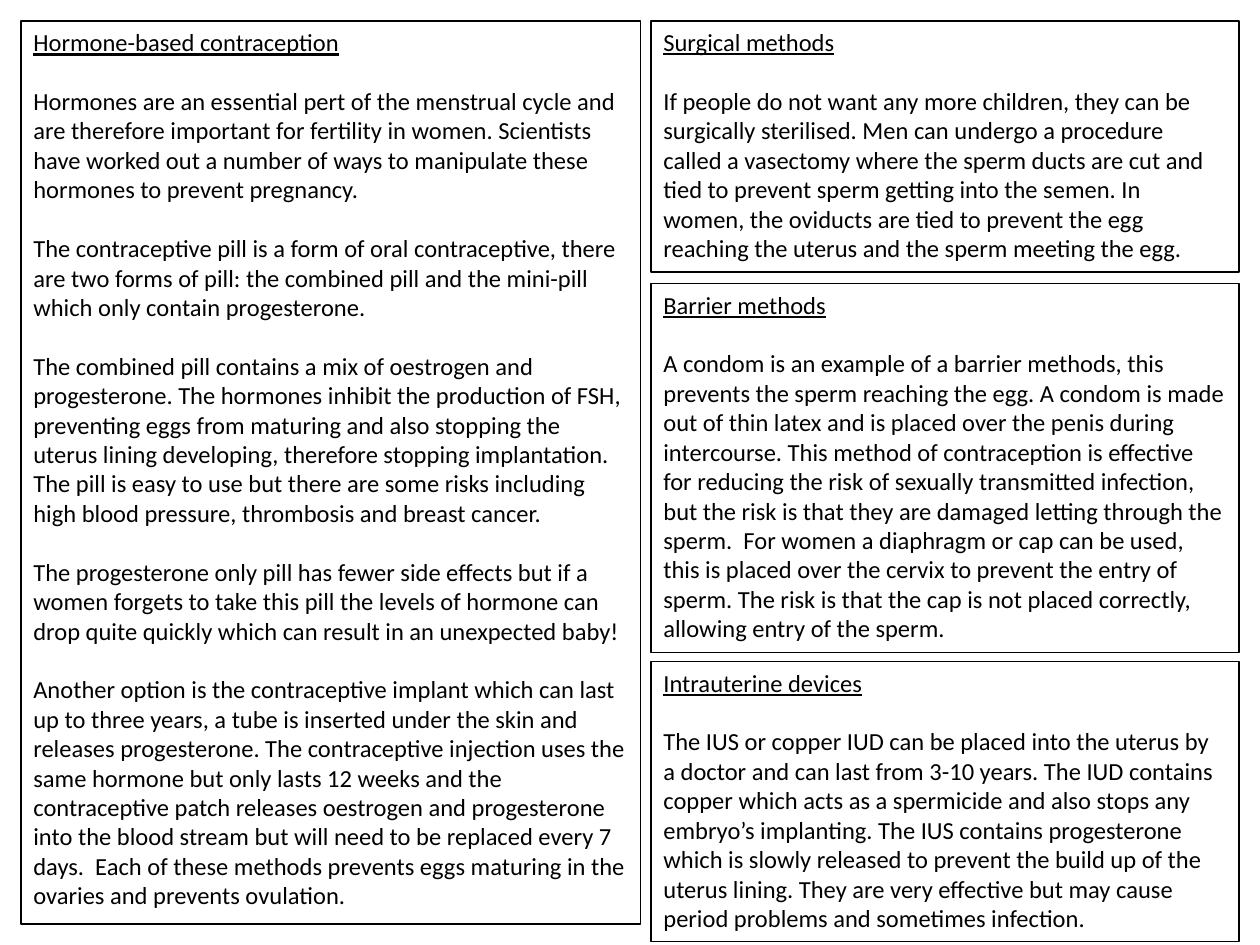
"""Build a one-slide summary of contraception methods in four bordered boxes."""
from pptx import Presentation
from pptx.dml.color import RGBColor
from pptx.enum.text import MSO_AUTO_SIZE
from pptx.util import Pt

FIT_SHAPE = MSO_AUTO_SIZE.SHAPE_TO_FIT_TEXT
COLOURS = {"ink": "000000"}
FONT_NAME = "Calibri"
FONT_SIZE = 14
PARAGRAPH_GAP = 16.8
BLANK_LAYOUT = 6

HORMONES = [
    "Hormones are an essential pert of the menstrual cycle and are therefore important for "
    "fertility in women. Scientists have worked out a number of ways to manipulate these "
    "hormones to prevent pregnancy.",
    "The contraceptive pill is a form of oral contraceptive, there are two forms of pill: the "
    "combined pill and the mini-pill which only contain progesterone.",
    "The combined pill contains a mix of oestrogen and progesterone. The hormones inhibit the "
    "production of FSH, preventing eggs from maturing and also stopping the uterus lining "
    "developing, therefore stopping implantation.  The pill is easy to use but there are some "
    "risks including high blood pressure, thrombosis and breast cancer.",
    "The progesterone only pill has fewer side effects but if a women forgets to take this pill "
    "the levels of hormone can drop quite quickly which can result in an unexpected baby!",
    "Another option is the contraceptive implant which can last up to three years, a tube is "
    "inserted under the skin and releases progesterone. The contraceptive injection uses the "
    "same hormone but only lasts 12 weeks and the contraceptive patch releases oestrogen and "
    "progesterone into the blood stream but will need to be replaced every 7 days.  Each of "
    "these methods prevents eggs maturing in the ovaries and prevents ovulation.",
]
SURGERY = [
    "If people do not want any more children, they can be surgically sterilised. Men can undergo "
    "a procedure called a vasectomy where the sperm ducts are cut and tied to prevent sperm "
    "getting into the semen. In women, the oviducts are tied to prevent the egg reaching the "
    "uterus and the sperm meeting the egg.",
]
BARRIERS = [
    "A condom is an example of a barrier methods, this prevents the sperm reaching the egg. A "
    "condom is made out of thin latex and is placed over the penis during intercourse. This "
    "method of contraception is effective for reducing the risk of sexually transmitted "
    "infection, but the risk is that they are damaged letting through the sperm.  For women a "
    "diaphragm or cap can be used, this is placed over the cervix to prevent the entry of sperm. "
    "The risk is that the cap is not placed correctly, allowing entry of the sperm.",
]
DEVICES = [
    "The IUS or copper IUD can be placed into the uterus by a doctor and can last from 3-10 "
    "years. The IUD contains copper which acts as a spermicide and also stops any embryo’s "
    "implanting. The IUS contains progesterone which is slowly released to prevent the build up "
    "of the uterus lining. They are very effective but may cause period problems and sometimes "
    "infection.",
]
COLUMNS = [
    {"left": 12, "width": 354, "boxes": [
        (12, 516, "Hormone-based contraception", HORMONES),
    ]},
    {"left": 372, "width": 336, "boxes": [
        (12, 143.5, "Surgical methods", SURGERY),
        (162, 211, "Barrier methods", BARRIERS),
        (378, 160, "Intrauterine devices", DEVICES),
    ]},
]


def add_method_box(slide, bounds, heading, texts):
    box = slide.shapes.add_textbox(*(Pt(length) for length in bounds))
    ink = RGBColor.from_string(COLOURS["ink"])
    box.line.color.rgb = ink
    box.line.width = Pt(0.75)
    frame = box.text_frame
    frame.word_wrap = True
    frame.auto_size = FIT_SHAPE
    for index, text in enumerate([heading, *texts]):
        para = frame.add_paragraph() if index else frame.paragraphs[0]
        para.text = text
        para.space_before = Pt(PARAGRAPH_GAP if index else 0)
        para.font.name = FONT_NAME
        para.font.size = Pt(FONT_SIZE)
        para.font.color.rgb = ink
        para.font.underline = index == 0


def main():
    deck = Presentation()
    deck.slide_width, deck.slide_height = Pt(720), Pt(540)
    slide = deck.slides.add_slide(deck.slide_layouts[BLANK_LAYOUT])
    for column in COLUMNS:
        for top, height, heading, texts in column["boxes"]:
            bounds = (column["left"], top, column["width"], height)
            add_method_box(slide, bounds, heading, texts)
    deck.save("out.pptx")


if __name__ == "__main__":
    main()
